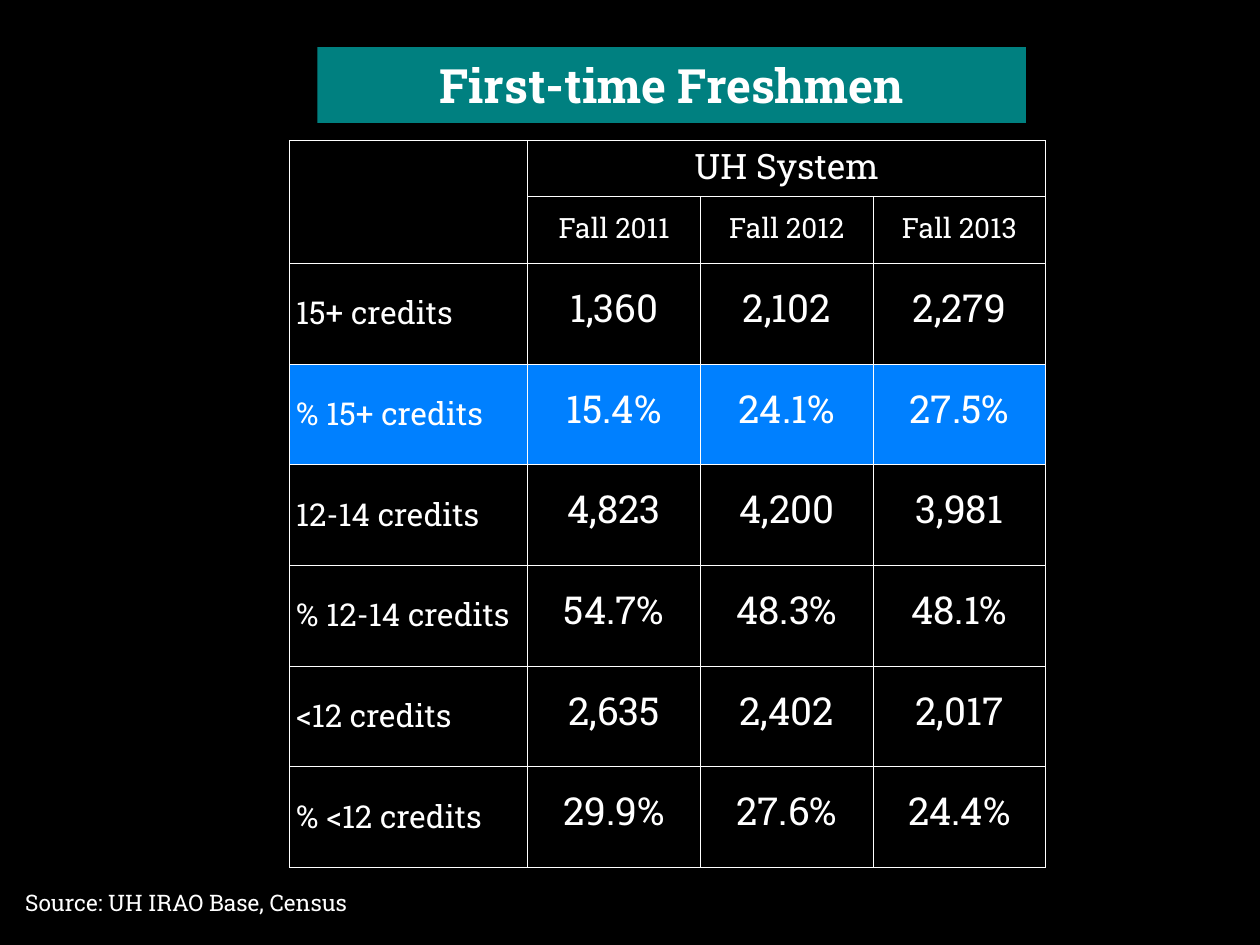
from typing import NamedTuple

from lxml.etree import SubElement
from pptx import Presentation
from pptx.dml.color import RGBColor
from pptx.enum.shapes import MSO_SHAPE as Shape
from pptx.enum.text import MSO_ANCHOR as Anchor, PP_ALIGN as Align
from pptx.oxml.ns import qn
from pptx.util import Cm, Pt

FONT = "Roboto Slab"
COLORS = {
    "background": "000000",
    "text": "FFFFFF",
    "title": "008080",
    "highlight": "0080FF",
}


class TextStyle(NamedTuple):
    size: float
    align: Align = Align.LEFT
    spacing: float = 1.0
    bold: bool = False


class CreditRow(NamedTuple):
    label: str
    values: tuple[str, str, str]
    highlighted: bool = False


TITLE = TextStyle(27, Align.CENTER, bold=True)
SOURCE = TextStyle(13)
SYSTEM = TextStyle(20, Align.CENTER, 0.78)
TERM = TextStyle(16, Align.CENTER, 0.78)
LABEL = TextStyle(18, Align.LEFT, 0.88)
VALUE = TextStyle(22, Align.CENTER, 0.58)

TERMS = ("Fall 2011", "Fall 2012", "Fall 2013")
CREDIT_ROWS = (
    CreditRow("15+ credits", ("1,360", "2,102", "2,279")),
    CreditRow("% 15+ credits", ("15.4%", "24.1%", "27.5%"), True),
    CreditRow("12-14 credits", ("4,823", "4,200", "3,981")),
    CreditRow("% 12-14 credits", ("54.7%", "48.3%", "48.1%")),
    CreditRow("<12 credits", ("2,635", "2,402", "2,017")),
    CreditRow("% <12 credits", ("29.9%", "27.6%", "24.4%")),
)
COLUMN_WIDTHS = (4.8,) + (3.48,) * len(TERMS)
ROW_HEIGHTS = (1.12, 1.35) + (2.03,) * len(CREDIT_ROWS)


def color(name: str) -> RGBColor:
    return RGBColor.from_string(COLORS[name])


def set_margins(holder, margin: float) -> None:
    holder.margin_left = holder.margin_right = Cm(margin)
    holder.margin_top = holder.margin_bottom = Cm(margin)


def write(text_frame, text: str, style: TextStyle) -> None:
    text_frame.word_wrap = True
    paragraph = text_frame.paragraphs[0]
    paragraph.alignment = style.align
    paragraph.line_spacing = style.spacing
    run = paragraph.add_run()
    run.text = text
    run.font.name = FONT
    run.font.size = Pt(style.size)
    run.font.bold = style.bold
    run.font.color.rgb = color("text")


def add_borders(cell) -> None:
    properties = cell._tc.get_or_add_tcPr()
    for side in ("a:lnL", "a:lnR", "a:lnT", "a:lnB"):
        line = SubElement(properties, qn(side), w=str(Pt(0.5)))
        fill = SubElement(line, qn("a:solidFill"))
        SubElement(fill, qn("a:srgbClr"), val=COLORS["text"])


def format_cell(cell, fill: str) -> None:
    set_margins(cell, 0.13)
    cell.vertical_anchor = Anchor.MIDDLE
    add_borders(cell)
    cell.fill.solid()
    cell.fill.fore_color.rgb = color(fill)


def add_title(slide) -> None:
    title = slide.shapes.add_shape(Shape.RECTANGLE, Cm(6.4), Cm(0.95), Cm(14.28), Cm(1.53))
    title.shadow.inherit = False
    title.fill.solid()
    title.fill.fore_color.rgb = color("title")
    title.line.fill.background()
    set_margins(title.text_frame, 0.1)
    title.text_frame.vertical_anchor = Anchor.MIDDLE
    write(title.text_frame, "First-time Freshmen", TITLE)


def add_credit_table(slide) -> None:
    table = slide.shapes.add_table(
        len(ROW_HEIGHTS), len(COLUMN_WIDTHS), Cm(5.84), Cm(2.84),
        Cm(sum(COLUMN_WIDTHS)), Cm(sum(ROW_HEIGHTS)),
    ).table
    table.first_row = table.horz_banding = False
    for column, width in zip(table.columns, COLUMN_WIDTHS):
        column.width = Cm(width)
    for row, height in zip(table.rows, ROW_HEIGHTS):
        row.height = Cm(height)

    fills = ["background"] * 2
    fills += ["highlight" if row.highlighted else "background" for row in CREDIT_ROWS]
    for row, fill in zip(table.rows, fills):
        for cell in row.cells:
            format_cell(cell, fill)

    table.cell(0, 0).merge(table.cell(1, 0))
    table.cell(0, 1).merge(table.cell(0, len(TERMS)))
    write(table.cell(0, 1).text_frame, "UH System", SYSTEM)
    for column, term in enumerate(TERMS, 1):
        write(table.cell(1, column).text_frame, term, TERM)
    for row, credit_row in enumerate(CREDIT_ROWS, 2):
        write(table.cell(row, 0).text_frame, credit_row.label, LABEL)
        for column, value in enumerate(credit_row.values, 1):
            write(table.cell(row, column).text_frame, value, VALUE)


def add_source(slide) -> None:
    source = slide.shapes.add_textbox(Cm(0.51), Cm(17.91), Cm(6.86), Cm(0.58))
    set_margins(source.text_frame, 0)
    write(source.text_frame, "Source: UH IRAO Base, Census", SOURCE)


def main() -> None:
    presentation = Presentation()
    presentation.slide_width = Cm(25.4)
    presentation.slide_height = Cm(19.05)
    slide = presentation.slides.add_slide(presentation.slide_layouts[6])
    slide.background.fill.solid()
    slide.background.fill.fore_color.rgb = color("background")
    add_title(slide)
    add_source(slide)
    add_credit_table(slide)
    presentation.save("out.pptx")


if __name__ == "__main__":
    main()
